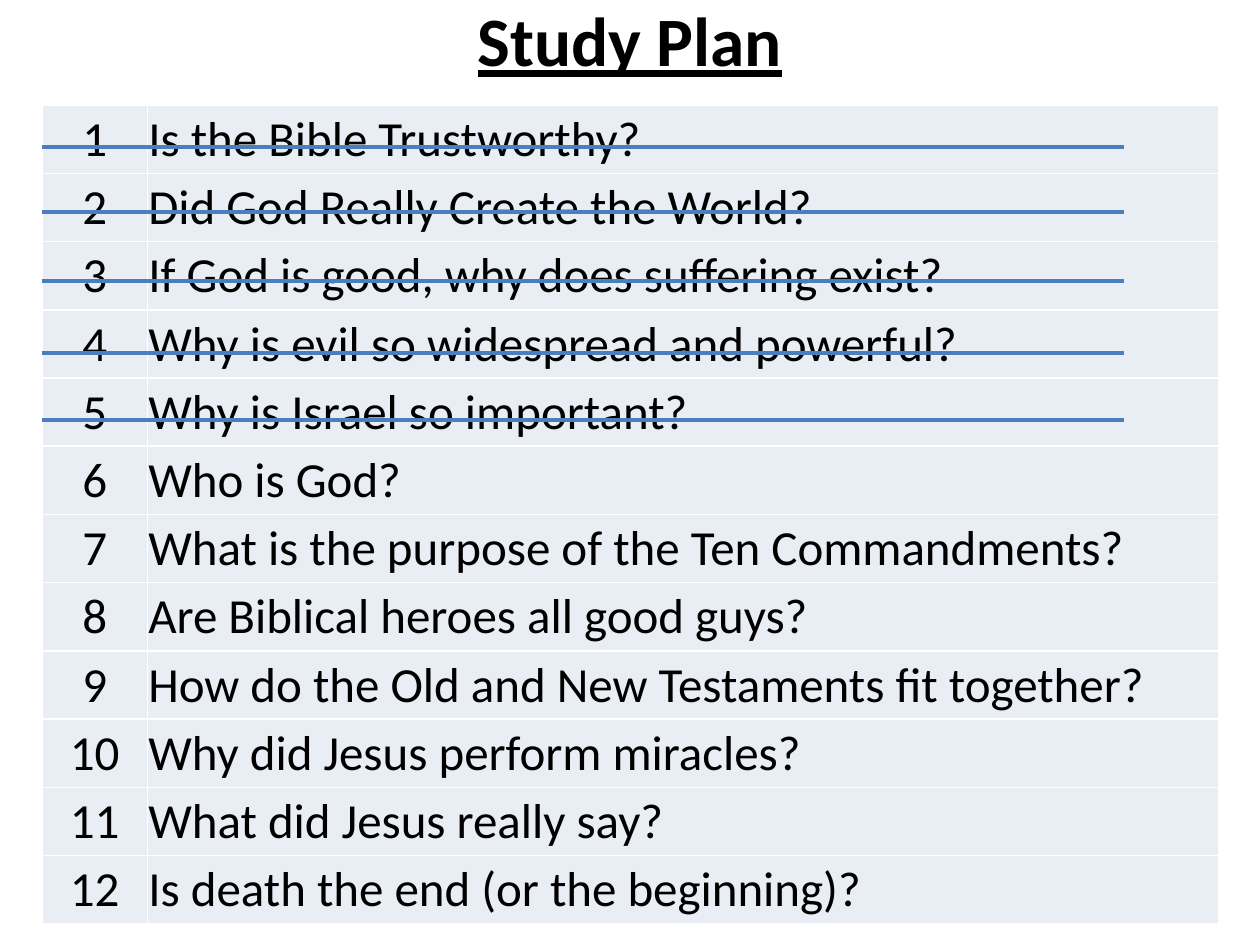
from lxml import etree
from pptx import Presentation
from pptx import util as u
from pptx.dml.color import RGBColor
from pptx.enum import shapes, text
from pptx.oxml import ns

BLACK = RGBColor(0x00, 0x00, 0x00)
WHITE = RGBColor(0xFF, 0xFF, 0xFF)
PALE_BLUE = RGBColor(0xE9, 0xED, 0xF4)
BLUE = RGBColor(0x4B, 0x7E, 0xBC)

QUESTIONS = [
    "Is the Bible Trustworthy?",
    "Did God Really Create the World?",
    "If God is good, why does suffering exist?",
    "Why is evil so widespread and powerful?",
    "Why is Israel so important?",
    "Who is God?",
    "What is the purpose of the Ten Commandments?",
    "Are Biblical heroes all good guys?",
    "How do the Old and New Testaments fit together?",
    "Why did Jesus perform miracles?",
    "What did Jesus really say?",
    "Is death the end (or the beginning)?",
]
STRIKE_HEIGHTS = [2.97, 4.27, 5.66, 7.11, 8.46]
LEFT, STRIKE_RIGHT = 0.85, 22.65


class PlanSlide:
    """Style of the study plan and the slide it is drawn on."""

    font = "Calibri"
    title_size = 39.6
    cell_size = 28

    def __init__(self, s):
        self.s = s

    def format_text(self, tf, size, align, bold=False, underline=False):
        p = tf.paragraphs[0]
        p.alignment = align
        f = p.runs[0].font
        f.name, f.size = self.font, u.Pt(size)
        f.bold, f.underline = bold, underline
        f.color.rgb = BLACK

    def title(self, words, x, y, w, h):
        sp = self.s.shapes.add_textbox(u.Cm(x), u.Cm(y), u.Cm(w), u.Cm(h))
        tf = sp.text_frame
        tf.word_wrap = True
        tf.vertical_anchor = text.MSO_ANCHOR.MIDDLE
        tf.text = words
        self.format_text(tf, self.title_size, text.PP_ALIGN.CENTER, True, True)

    def cell_borders(self, cell):
        tcPr = cell._tc.get_or_add_tcPr()
        for i, side in enumerate(("lnL", "lnR", "lnT", "lnB")):
            ln = etree.Element(ns.qn("a:" + side), w=str(u.Pt(1)))
            fill = etree.SubElement(ln, ns.qn("a:solidFill"))
            etree.SubElement(fill, ns.qn("a:srgbClr"), val=str(WHITE))
            tcPr.insert(i, ln)

    def cell(self, cell, words, align):
        cell.text = words
        cell.vertical_anchor = text.MSO_ANCHOR.MIDDLE
        cell.margin_left = cell.margin_right = cell.margin_top = u.Cm(0.02)
        cell.margin_bottom = 0
        cell.fill.solid()
        cell.fill.fore_color.rgb = PALE_BLUE
        self.format_text(cell.text_frame, self.cell_size, align)
        self.cell_borders(cell)

    def numbered_table(self, items, x, y, widths, h):
        table = self.s.shapes.add_table(
            len(items), 2, u.Cm(x), u.Cm(y), u.Cm(sum(widths)), u.Cm(h)).table
        table.first_row = table.horz_banding = False
        for column, width in zip(table.columns, widths):
            column.width = u.Cm(width)
        for i, item in enumerate(items):
            self.cell(table.cell(i, 0), str(i + 1), text.PP_ALIGN.CENTER)
            self.cell(table.cell(i, 1), item, text.PP_ALIGN.LEFT)

    def strike(self, x1, x2, y):
        line = self.s.shapes.add_connector(
            shapes.MSO_CONNECTOR.STRAIGHT, u.Cm(x1), u.Cm(y), u.Cm(x2), u.Cm(y))
        line.line.color.rgb = BLUE
        line.line.width = u.Pt(2.25)
        etree.SubElement(line._element.spPr, ns.qn("a:effectLst"))


def main():
    prs = Presentation()
    prs.slide_width, prs.slide_height = u.Cm(25.4), u.Cm(19.05)
    plan = PlanSlide(prs.slides.add_slide(prs.slide_layouts[6]))

    # Heading
    plan.title("Study Plan", 1.27, -0.2, 22.86, 1.98)

    # Numbered questions
    plan.numbered_table(QUESTIONS, LEFT, 2.12, (2.12, 21.59), 16.51)

    # Lines through the finished topics
    for y in STRIKE_HEIGHTS:
        plan.strike(LEFT, STRIKE_RIGHT, y)

    prs.save("out.pptx")


if __name__ == "__main__":
    main()
